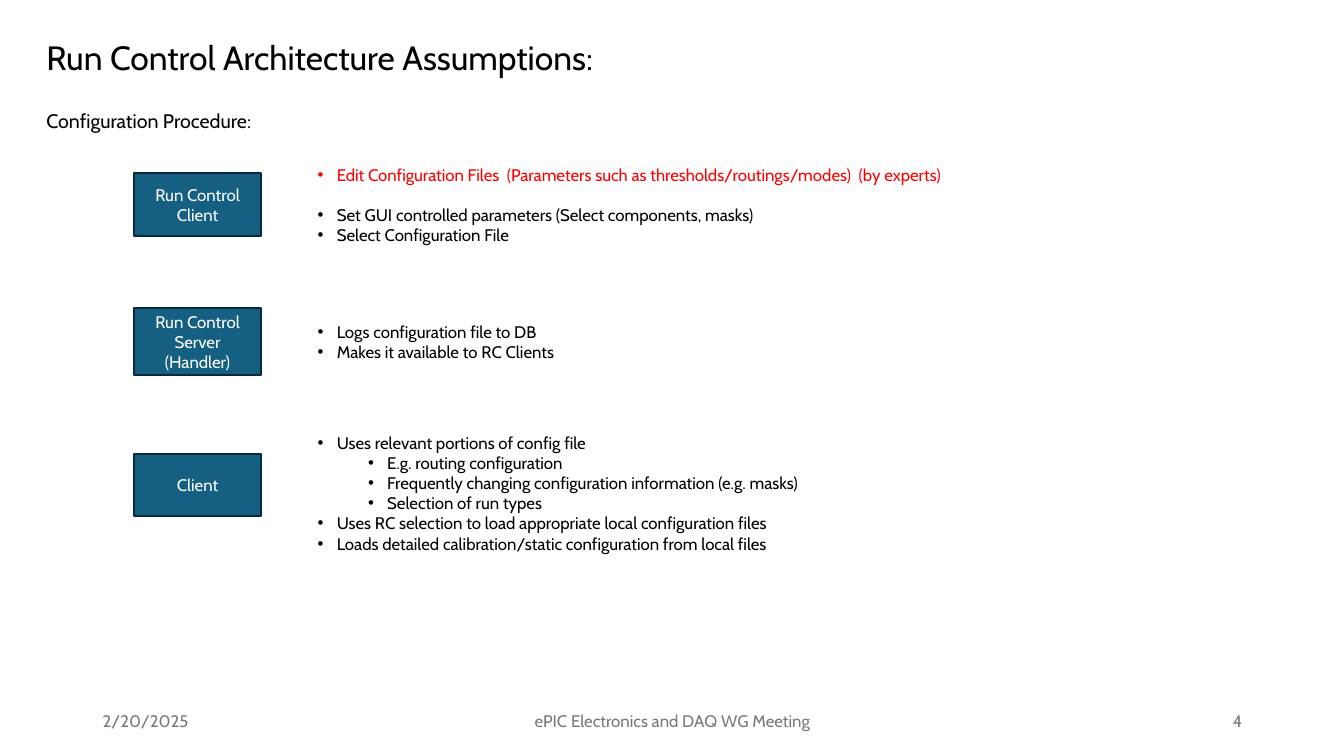
from lxml.etree import SubElement
from pptx import Presentation
from pptx.dml.color import RGBColor
from pptx.enum.shapes import MSO_SHAPE
from pptx.enum.text import MSO_ANCHOR, MSO_AUTO_SIZE, PP_ALIGN
from pptx.oxml.ns import qn
from pptx.util import Inches, Pt

COLORS = {"ink": "000000", "alert": "FF0000", "muted": "797979",
          "box": "156082", "edge": "092A39", "white": "FFFFFF"}

ROLES = [
    {"top": 1.72, "height": 0.62, "label": ["Run Control", "Client"],
     "area": (3.05, 1.58, 6.56, 0.91),
     "steps": [
         (0, "Edit Configuration Files  (Parameters such as thresholds/routings/modes)"
             "  (by experts)", {"color": "alert"}),
         (0, "Set GUI controlled parameters (Select components, masks)", {"before": 14.5}),
         (0, "Select Configuration File", {})]},
    {"top": 3.06, "height": 0.66, "label": ["Run Control Server", "(Handler)"],
     "area": (3.05, 3.14, 2.67, 0.5),
     "steps": [
         (0, "Logs configuration file to DB", {}),
         (0, "Makes it available to RC Clients", {})]},
    {"top": 4.5, "height": 0.62, "label": ["Client"],
     "area": (3.05, 4.24, 5.1, 1.31),
     "steps": [
         (0, "Uses relevant portions of config file", {}),
         (1, "E.g. routing configuration", {}),
         (1, "Frequently changing configuration information (e.g. masks)", {}),
         (1, "Selection of run types", {}),
         (0, "Uses RC selection to load appropriate local configuration files", {}),
         (0, "Loads detailed calibration/static configuration from local files", {})]},
]

FOOTERS = [
    (0.92, 3, "2/20/2025", PP_ALIGN.LEFT),
    (4.42, 4.5, "ePIC Electronics and DAQ WG Meeting", PP_ALIGN.CENTER),
    (9.42, 3, "4", PP_ALIGN.RIGHT),
]


class SlideBuilder:
    """Holds the text style and the current slide."""

    font_format = {"name": "Cabin", "bold": False}

    def __init__(self, slide):
        self.slide = slide

    def place(self, shape, area):
        """Move a shape to left, top, width, height in inches."""
        for side, length in zip(("left", "top", "width", "height"), area):
            setattr(shape, side, Inches(length))

    def frame(self, shape, anchor=MSO_ANCHOR.TOP, wrap=True, fit=MSO_AUTO_SIZE.NONE):
        """Format and return the text frame of a shape."""
        text_format = {
            "vertical_anchor": anchor, "word_wrap": wrap, "auto_size": fit,
            "margin_left": Inches(0.1), "margin_right": Inches(0.1),
            "margin_top": Inches(0.05), "margin_bottom": Inches(0.05),
        }
        for key, value in text_format.items():
            setattr(shape.text_frame, key, value)
        return shape.text_frame

    def add_words(self, paragraph, words, size=12, color="ink", align=PP_ALIGN.LEFT, before=0):
        """Put one styled run in a paragraph."""
        paragraph_format = {"alignment": align, "space_before": Pt(before),
                            "space_after": Pt(0), "line_spacing": 1.0}
        for key, value in paragraph_format.items():
            setattr(paragraph, key, value)
        run = paragraph.add_run()
        run.text = words
        for key, value in {**self.font_format, "size": Pt(size)}.items():
            setattr(run.font, key, value)
        run.font.color.rgb = RGBColor.from_string(COLORS[color])

    def paragraphs(self, frame, count):
        """Return the first paragraph and as many more as needed."""
        return [frame.paragraphs[0]] + [frame.add_paragraph() for _ in range(count - 1)]

    def heading(self, placeholder, area, words, size):
        """Fill a placeholder with one line of heading text."""
        self.place(placeholder, area)
        self.add_words(self.frame(placeholder).paragraphs[0], words, size)

    def bullet(self, paragraph, level):
        """Give a paragraph a hanging bullet."""
        paragraph.level = level
        properties = paragraph._p.get_or_add_pPr()
        properties.set("marL", str(Inches(0.19 + 0.5 * level)))
        properties.set("indent", str(Inches(-0.19)))
        SubElement(properties, qn("a:buFont"), typeface="Arial")
        SubElement(properties, qn("a:buChar"), char="•")

    def step_list(self, placeholder, area, steps):
        """Fill a body placeholder with bulleted steps."""
        self.place(placeholder, area)
        frame = self.frame(placeholder, wrap=False, fit=MSO_AUTO_SIZE.SHAPE_TO_FIT_TEXT)
        for paragraph, (level, words, style) in zip(self.paragraphs(frame, len(steps)), steps):
            self.bullet(paragraph, level)
            self.add_words(paragraph, words, **style)

    def role_box(self, top, height, label):
        """Draw the box that names a role."""
        box = self.slide.shapes.add_shape(
            MSO_SHAPE.RECTANGLE, Inches(1.33), Inches(top), Inches(1.26), Inches(height))
        box.shadow.inherit = False
        box.fill.solid()
        box.fill.fore_color.rgb = RGBColor.from_string(COLORS["box"])
        box.line.color.rgb = RGBColor.from_string(COLORS["edge"])
        box.line.width = Pt(1.5)
        frame = self.frame(box, MSO_ANCHOR.MIDDLE)
        for paragraph, words in zip(self.paragraphs(frame, len(label)), label):
            self.add_words(paragraph, words, color="white", align=PP_ALIGN.CENTER)

    def footer(self, left, width, words, align):
        """Add one footer text."""
        note = self.slide.shapes.add_textbox(
            Inches(left), Inches(6.95), Inches(width), Inches(0.4))
        frame = self.frame(note, MSO_ANCHOR.MIDDLE)
        self.add_words(frame.paragraphs[0], words, color="muted", align=align)


def main():
    """Build and save the slide."""
    deck = Presentation()
    deck.slide_width, deck.slide_height = Inches(13.33), Inches(7.5)
    slide = deck.slides.add_slide(deck.slide_layouts.get_by_name("Comparison"))
    builder = SlideBuilder(slide)
    title, subtitle, *bodies = slide.placeholders
    builder.heading(title, (0.36, 0.32, 6.36, 0.5), "Run Control Architecture Assumptions:", 24)
    builder.heading(subtitle, (0.36, 1.03, 6.36, 0.34), "Configuration Procedure:", 14)
    for role, body in zip(ROLES, bodies):
        builder.role_box(role["top"], role["height"], role["label"])
        builder.step_list(body, role["area"], role["steps"])
    for footer in FOOTERS:
        builder.footer(*footer)
    deck.save("out.pptx")


if __name__ == "__main__":
    main()
